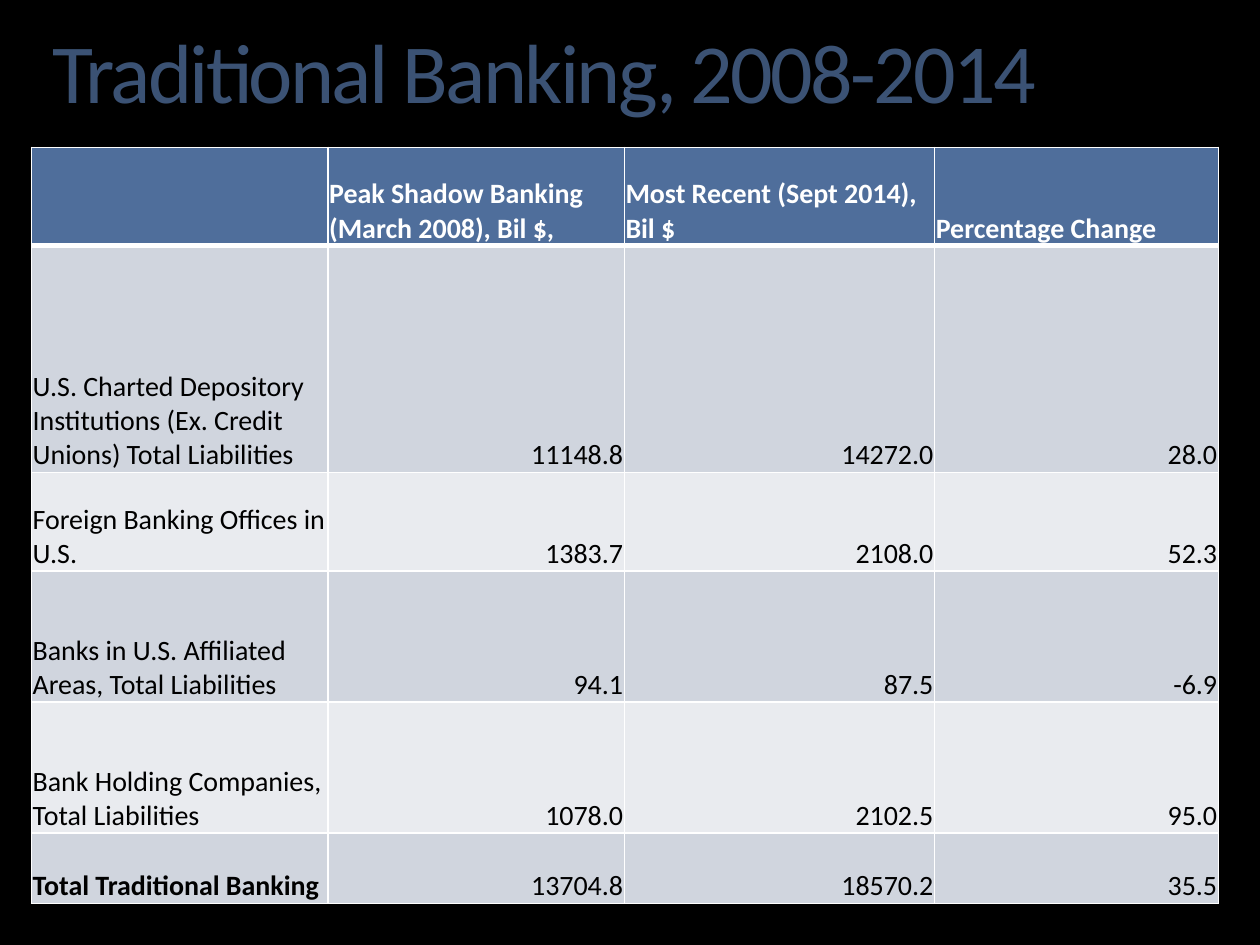
from lxml.etree import SubElement
from pptx import Presentation
from pptx.dml.color import RGBColor
from pptx.enum.text import MSO_ANCHOR, PP_ALIGN
from pptx.oxml.ns import qn
from pptx.util import Inches, Pt

COLORS = {
    "background": "000000",
    "title": "3B5274",
    "header": "4F6E9B",
    "odd_row": "D0D5DE",
    "even_row": "E9EBEF",
    "light": "FFFFFF",
    "dark": "000000",
}
FONT = "Calibri"
WIDTH, HEIGHT = Inches(10), Inches(7.5)
TITLE_BOX = (0.042, 0.033, 0.917, 0.097)
TABLE_BOX = (0.025, 0.156, 0.942, 0.8)
COLUMN_WEIGHTS = (2.35, 2.35, 2.46, 2.25)
ROW_WEIGHTS = (0.78, 1.8, 0.78, 1.04, 1.04, 0.56)
ROWS = (
    ("", "Peak Shadow Banking (March 2008), Bil $,", "Most Recent (Sept 2014), Bil $", "Percentage Change"),
    ("U.S. Charted Depository Institutions (Ex. Credit Unions) Total Liabilities", "11148.8", "14272.0", "28.0"),
    ("Foreign Banking Offices in U.S.", "1383.7", "2108.0", "52.3"),
    ("Banks in U.S. Affiliated Areas, Total Liabilities", "94.1", "87.5", "-6.9"),
    ("Bank Holding Companies, Total Liabilities", "1078.0", "2102.5", "95.0"),
    ("Total Traditional Banking", "13704.8", "18570.2", "35.5"),
)


def color(name):
    """Return the named colour."""
    return RGBColor.from_string(COLORS[name])


def place(box):
    """Turn shares of the slide into left, top, width and height."""
    return [round(share * side) for share, side in zip(box, (WIDTH, HEIGHT) * 2)]


def style_font(paragraph, size, color_name, bold=False):
    """Set the font of a whole paragraph."""
    font = paragraph.font
    font.name, font.size, font.bold = FONT, Pt(size), bold
    font.color.rgb = color(color_name)


def add_title(slide, box, text):
    """Place the tightly spaced title in the box."""
    frame = slide.shapes.add_textbox(*place(box)).text_frame
    frame.word_wrap = True
    frame.margin_left = frame.margin_top = frame.margin_right = frame.margin_bottom = 0
    paragraph = frame.paragraphs[0]
    paragraph.line_spacing = 0.9
    run = paragraph.add_run()
    run.text = text
    run.font._element.set("spc", "-150")
    style_font(paragraph, 48, "title")


def add_borders(cell, row):
    """Draw white cell borders, with a thick rule under the header."""
    thick_side = {0: "lnB", 1: "lnT"}.get(row)
    properties = cell._tc.get_or_add_tcPr()
    for side in ("lnL", "lnR", "lnT", "lnB"):
        points = 3 if side == thick_side else 1
        line = SubElement(properties, qn(f"a:{side}"), w=str(Pt(points)))
        fill = SubElement(line, qn("a:solidFill"))
        SubElement(fill, qn("a:srgbClr"), val=COLORS["light"])


def fill_cell(cell, row, column, text):
    """Write and style one cell according to its row and column."""
    header = row == 0
    add_borders(cell, row)
    cell.fill.solid()
    cell.fill.fore_color.rgb = color("header" if header else "odd_row" if row % 2 else "even_row")
    cell.vertical_anchor = MSO_ANCHOR.BOTTOM
    cell.margin_left = cell.margin_top = cell.margin_right = Inches(0.01)
    cell.margin_bottom = 0
    cell.text = text
    paragraph = cell.text_frame.paragraphs[0]
    paragraph.alignment = PP_ALIGN.LEFT if header or column == 0 else PP_ALIGN.RIGHT
    total_label = row == len(ROWS) - 1 and column == 0
    style_font(paragraph, 16, "light" if header else "dark", header or total_label)


def add_banking_table(slide, box):
    """Place the banking table, sharing the box out by weights."""
    left, top, width, height = place(box)
    table = slide.shapes.add_table(len(ROWS), len(COLUMN_WEIGHTS), left, top, width, height).table
    for column, weight in zip(table.columns, COLUMN_WEIGHTS):
        column.width = round(width * weight / sum(COLUMN_WEIGHTS))
    for row, weight in zip(table.rows, ROW_WEIGHTS):
        row.height = round(height * weight / sum(ROW_WEIGHTS))
    for row, texts in enumerate(ROWS):
        for column, text in enumerate(texts):
            fill_cell(table.cell(row, column), row, column, text)


def main():
    """Build and save the presentation."""
    presentation = Presentation()
    presentation.slide_width, presentation.slide_height = WIDTH, HEIGHT
    slide = presentation.slides.add_slide(presentation.slide_layouts[6])
    slide.background.fill.solid()
    slide.background.fill.fore_color.rgb = color("background")
    add_title(slide, TITLE_BOX, "Traditional Banking, 2008-2014")
    add_banking_table(slide, TABLE_BOX)
    presentation.save("out.pptx")


if __name__ == "__main__":
    main()
